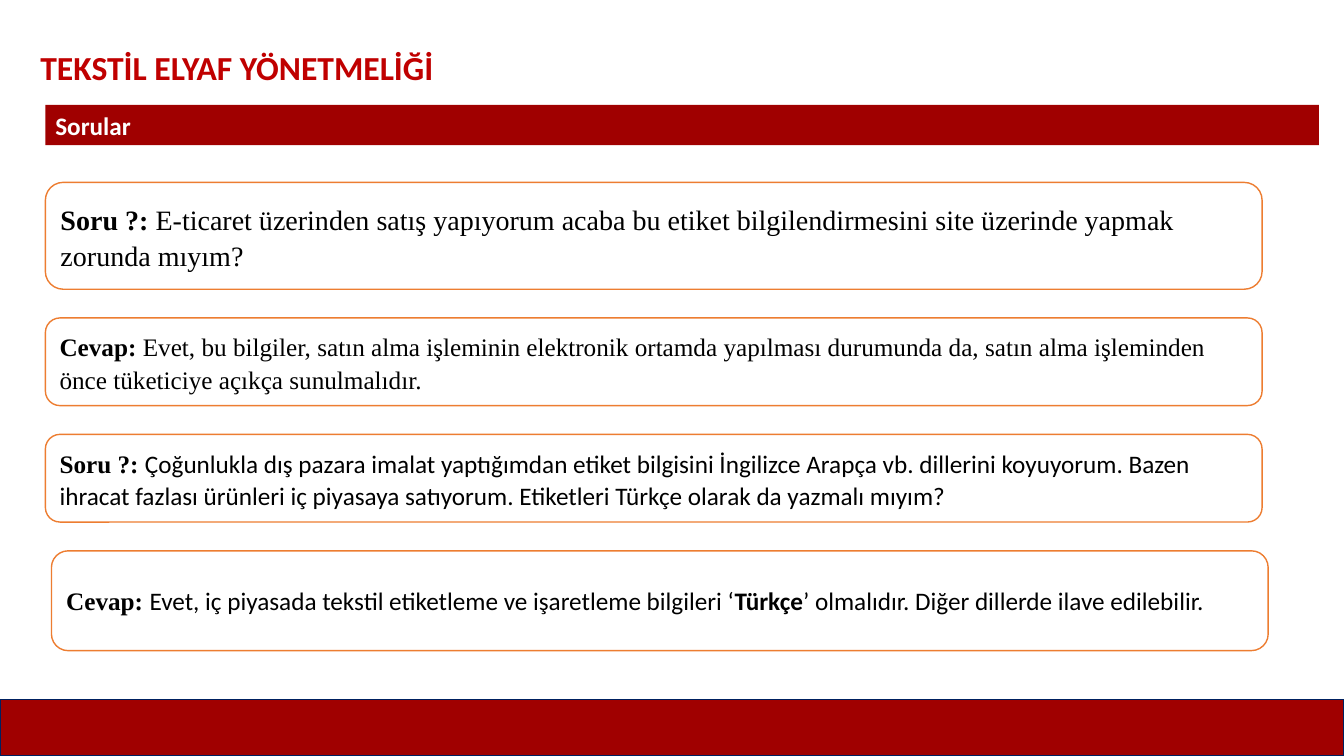
"""Build the questions slide on the textile fibre regulation."""
from dataclasses import dataclass

from pptx import Presentation
from pptx import util as u
from pptx.dml.color import RGBColor
from pptx.enum import shapes, text

RED = RGBColor(0xA0, 0x00, 0x00)
CRIMSON = RGBColor(0xC0, 0x00, 0x00)
NAVY = RGBColor(0x00, 0x20, 0x60)
ORANGE = RGBColor(0xED, 0x7D, 0x31)
WHITE = RGBColor(0xFF, 0xFF, 0xFF)
BLACK = RGBColor(0x00, 0x00, 0x00)
SANS, SERIF = "Calibri", "Times New Roman"
WIDE, HIGH = u.Inches(13.33), u.Inches(7.5)
LEFT, SPAN, TOP, GAP = 3.38, 90.53, 24.13, 3.8


@dataclass
class Run:
    """A stretch of text in one face."""
    words: str
    face: str = SANS
    bold: bool = False


@dataclass
class Card:
    """A rounded box with a question or an answer."""
    tall: float
    runs: list[Run]
    size: int = 18
    shift: float = 0
    loose: bool = True


CARDS = [
    Card(14.13, [
        Run("Soru ?: ", SERIF, True),
        Run("E-ticaret üzerinden satış yapıyorum acaba bu etiket bilgilendirmesini "
            "site üzerinde yapmak zorunda mıyım?", SERIF)], size=20),
    Card(11.6, [
        Run("Cevap: ", SERIF, True),
        Run("Evet, bu bilgiler, satın alma işleminin elektronik ortamda yapılması "
            "durumunda da, satın alma işleminden önce tüketiciye açıkça "
            "sunulmalıdır.", SERIF)]),
    Card(11.6, [
        Run("Soru ?: ", SERIF, True),
        Run("Çoğunlukla dış pazara imalat yaptığımdan etiket bilgisini İngilizce "
            "Arapça vb. dillerini koyuyorum. Bazen ihracat fazlası ürünleri iç "
            "piyasaya satıyorum. Etiketleri Türkçe olarak da yazmalı mıyım?")]),
    Card(13.2, [
        Run("Cevap: ", SERIF, True),
        Run("Evet, iç piyasada tekstil etiketleme ve işaretleme bilgileri ‘"),
        Run("Türkçe", bold=True),
        Run("’ olmalıdır. Diğer dillerde ilave edilebilir.")],
        shift=0.45, loose=False),
]


def place(left: float, top: float, wide: float, tall: float) -> tuple[int, ...]:
    """Turn percentages of the slide into lengths."""
    return (int(WIDE * left / 100), int(HIGH * top / 100),
            int(WIDE * wide / 100), int(HIGH * tall / 100))


def block(slide, kind, area: tuple[int, ...], fill: RGBColor,
          edge: RGBColor | None = None):
    """Draw a flat filled shape."""
    shape = slide.shapes.add_shape(kind, *area)
    shape.shadow.inherit = False
    shape.fill.solid()
    shape.fill.fore_color.rgb = fill
    if edge is None:
        shape.line.fill.background()
    else:
        shape.line.color.rgb = edge
        shape.line.width = u.Pt(1)
    return shape


def label(shape, words: str, size: int, color: RGBColor, align) -> None:
    """Write one bold line at the top of a shape."""
    frame = shape.text_frame
    frame.word_wrap = True
    frame.vertical_anchor = text.MSO_ANCHOR.TOP
    frame.auto_size = text.MSO_AUTO_SIZE.NONE
    para = frame.paragraphs[0]
    para.text, para.alignment = words, align
    font = para.font
    font.name, font.size, font.bold = SANS, u.Pt(size), True
    font.color.rgb = color


def draw(slide, card: Card, top: float) -> None:
    """Draw a card with its runs."""
    area = place(LEFT + card.shift, top, SPAN, card.tall)
    shape = block(slide, shapes.MSO_SHAPE.ROUNDED_RECTANGLE, area, WHITE, ORANGE)
    frame = shape.text_frame
    frame.word_wrap = True
    frame.vertical_anchor = text.MSO_ANCHOR.MIDDLE
    para = frame.paragraphs[0]
    para.alignment = text.PP_ALIGN.LEFT
    if card.loose:
        para.line_spacing, para.space_after = 1.07, u.Pt(8)
    para.font.size = u.Pt(card.size)
    para.font.color.rgb = BLACK
    for part in card.runs:
        run = para.add_run()
        run.text = part.words
        run.font.name, run.font.bold = part.face, part.bold


def main() -> None:
    """Build and save the slide."""
    deck = Presentation()
    deck.slide_width, deck.slide_height = WIDE, HIGH
    slide = deck.slides.add_slide(deck.slide_layouts[5])
    title = slide.shapes.title
    title.left, title.top, title.width, title.height = place(2.25, 5.6, 92.2, 6.67)
    label(title, "TEKSTİL ELYAF YÖNETMELİĞİ", 24, CRIMSON, text.PP_ALIGN.LEFT)

    rect = shapes.MSO_SHAPE.RECTANGLE
    block(slide, rect, place(0, 92.53, 100, 7.47), RED, NAVY)
    band = block(slide, rect, place(LEFT, 13.87, 94.75, 5.33), RED)
    label(band, "Sorular", 18, WHITE, text.PP_ALIGN.JUSTIFY)

    top = TOP
    for card in CARDS:
        draw(slide, card, top)
        top += card.tall + GAP
    deck.save("out.pptx")


if __name__ == "__main__":
    main()
